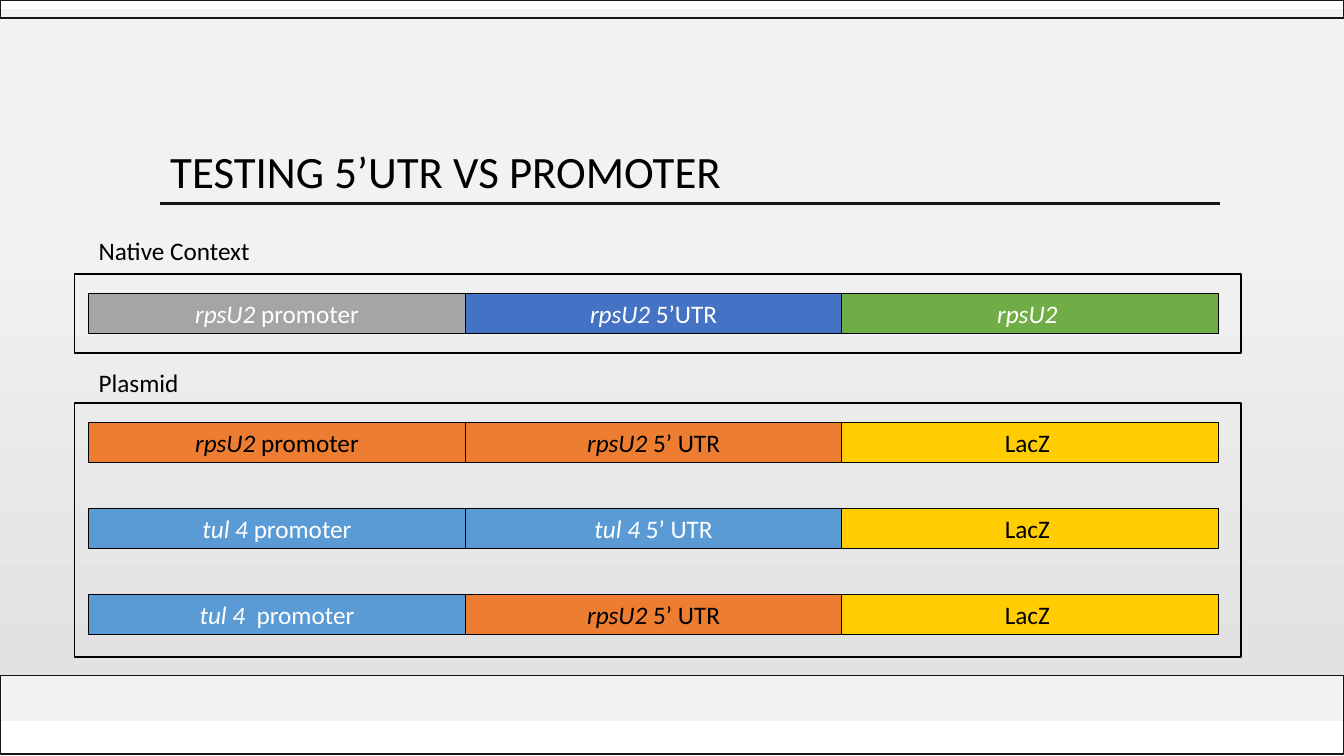
from pptx import Presentation
from pptx.dml.color import RGBColor
from pptx.enum.shapes import MSO_CONNECTOR, MSO_SHAPE
from pptx.enum.text import MSO_ANCHOR, PP_ALIGN
from pptx.oxml.xmlchemy import OxmlElement
from pptx.util import Inches, Pt

RECTANGLE = MSO_SHAPE.RECTANGLE
STRAIGHT = MSO_CONNECTOR.STRAIGHT
MIDDLE = MSO_ANCHOR.MIDDLE
LEFT, CENTER = PP_ALIGN.LEFT, PP_ALIGN.CENTER

FONT = "Calibri"
BLACK, WHITE, INK, PALE = "000000", "FFFFFF", "181717", "F2F2F2"
GRAY, BLUE, GREEN = "A5A5A5", "4472C4", "70AD47"
ORANGE, SKY, GOLD = "ED7D31", "5B9BD5", "FFCD00"

TITLE = "TESTING 5’UTR VS PROMOTER"

# Each segment: italic gene name, upright rest, fill, text colour
LACZ = ("", "LacZ ", GOLD, BLACK)
RPSU2_UTR = ("rpsU2", " 5’ UTR", ORANGE, BLACK)
NATIVE = [
    [("rpsU2 ", "promoter", GRAY, WHITE), ("rpsU2 ", "5’UTR", BLUE, WHITE), ("rpsU2 ", "", GREEN, WHITE)],
]
PLASMID = [
    [("rpsU2", " promoter", ORANGE, BLACK), RPSU2_UTR, LACZ],
    [("tul 4 ", "promoter", SKY, WHITE), ("tul 4", " 5’ UTR", SKY, WHITE), LACZ],
    [("tul 4  ", "promoter", SKY, WHITE), RPSU2_UTR, LACZ],
]

# Each panel: label, label top, frame top, frame height, construct rows
PANELS = [
    ("Native Context", 2.28, 2.72, 0.78, NATIVE),
    ("Plasmid", 3.59, 4.00, 2.52, PLASMID),
]

PAGE_WIDTH, PAGE_HEIGHT = 13.33, 7.5
FRAME_LEFT, FRAME_WIDTH = 0.74, 11.57
SEGMENT_LEFT, SEGMENT_WIDTH, SEGMENT_HEIGHT = 0.88, 3.735, 0.4
ROW_INSET, ROW_STEP = 0.19, 0.855


def color(value):
    return RGBColor.from_string(value)


def add_box(shapes, left, top, width, height, fill=None, line=None, weight=1):
    box = shapes.add_shape(RECTANGLE, Inches(left), Inches(top), Inches(width), Inches(height))
    box.shadow.inherit = False
    if fill:
        box.fill.solid()
        box.fill.fore_color.rgb = color(fill)
    else:
        box.fill.background()
    if line:
        box.line.color.rgb = color(line)
        box.line.width = Pt(weight)
    else:
        box.line.fill.background()
    return box


def add_rule(shapes, left, right, top, weight):
    rule = shapes.add_connector(STRAIGHT, Inches(left), Inches(top), Inches(right), Inches(top))
    rule.line.color.rgb = color(INK)
    rule.line.width = Pt(weight)
    rule._element.spPr.append(OxmlElement("a:effectLst"))


def write(box, spans, size, text_color, align):
    """Fill a box with one line made of (text, italic) spans."""
    frame = box.text_frame
    frame.word_wrap = True
    frame.vertical_anchor = MIDDLE
    frame.margin_left = frame.margin_right = Inches(0.1)
    frame.margin_top = frame.margin_bottom = Inches(0.1)
    para = frame.paragraphs[0]
    para.alignment = align
    for text, italic in spans:
        if text:
            span = para.add_run()
            span.text = text
            span.font.name = FONT
            span.font.size = Pt(size)
            span.font.italic = italic
            span.font.color.rgb = color(text_color)
    return para


def add_label(shapes, left, top, width, height, text, size):
    box = shapes.add_textbox(Inches(left), Inches(top), Inches(width), Inches(height))
    return write(box, [(text, False)], size, BLACK, LEFT)


def add_backdrop(shapes):
    add_box(shapes, 0, 0.1, PAGE_WIDTH, 7.04, PALE, PALE, 1.25)
    shade = add_box(shapes, 0, 2.21, PAGE_WIDTH, 4.49)
    shade.fill.gradient()
    shade.fill.gradient_angle = 270
    for stop, position, value in zip(shade.fill.gradient_stops, (0, 1), (PALE, "E2E2E2")):
        stop.position = position
        stop.color.rgb = color(value)
    add_rule(shapes, 0, PAGE_WIDTH, 6.7, 1)
    add_box(shapes, 0, 6.7, PAGE_WIDTH, 0.78, line=INK)
    add_box(shapes, 0, 0, PAGE_WIDTH, 0.18, line=INK)


def add_panel(shapes, label, label_top, frame_top, frame_height, rows):
    constructs = shapes.add_group_shape().shapes
    for row, segments in enumerate(rows):
        top = frame_top + ROW_INSET + row * ROW_STEP
        for column, (gene, rest, fill, text_color) in enumerate(segments):
            left = SEGMENT_LEFT + column * SEGMENT_WIDTH
            box = add_box(constructs, left, top, SEGMENT_WIDTH, SEGMENT_HEIGHT, fill, BLACK, 0.75)
            write(box, [(gene, True), (rest, False)], 18, text_color, CENTER)
    add_box(shapes, FRAME_LEFT, frame_top, FRAME_WIDTH, frame_height, line=BLACK, weight=1.25)
    add_label(shapes, SEGMENT_LEFT, label_top, SEGMENT_WIDTH, SEGMENT_HEIGHT, label, 18)


def main():
    deck = Presentation()
    deck.slide_width, deck.slide_height = Inches(PAGE_WIDTH), Inches(PAGE_HEIGHT)
    page = deck.slides.add_slide(deck.slide_layouts[6])
    add_backdrop(page.shapes)
    add_rule(page.shapes, 1.59, 12.1, 2.02, 2.5)
    title = add_label(page.shapes, 1.59, 1.43, 10.5, 0.6, TITLE, 32)
    title.line_spacing = 0.9
    for panel in PANELS:
        add_panel(page.shapes, *panel)
    deck.save("out.pptx")


if __name__ == "__main__":
    main()
